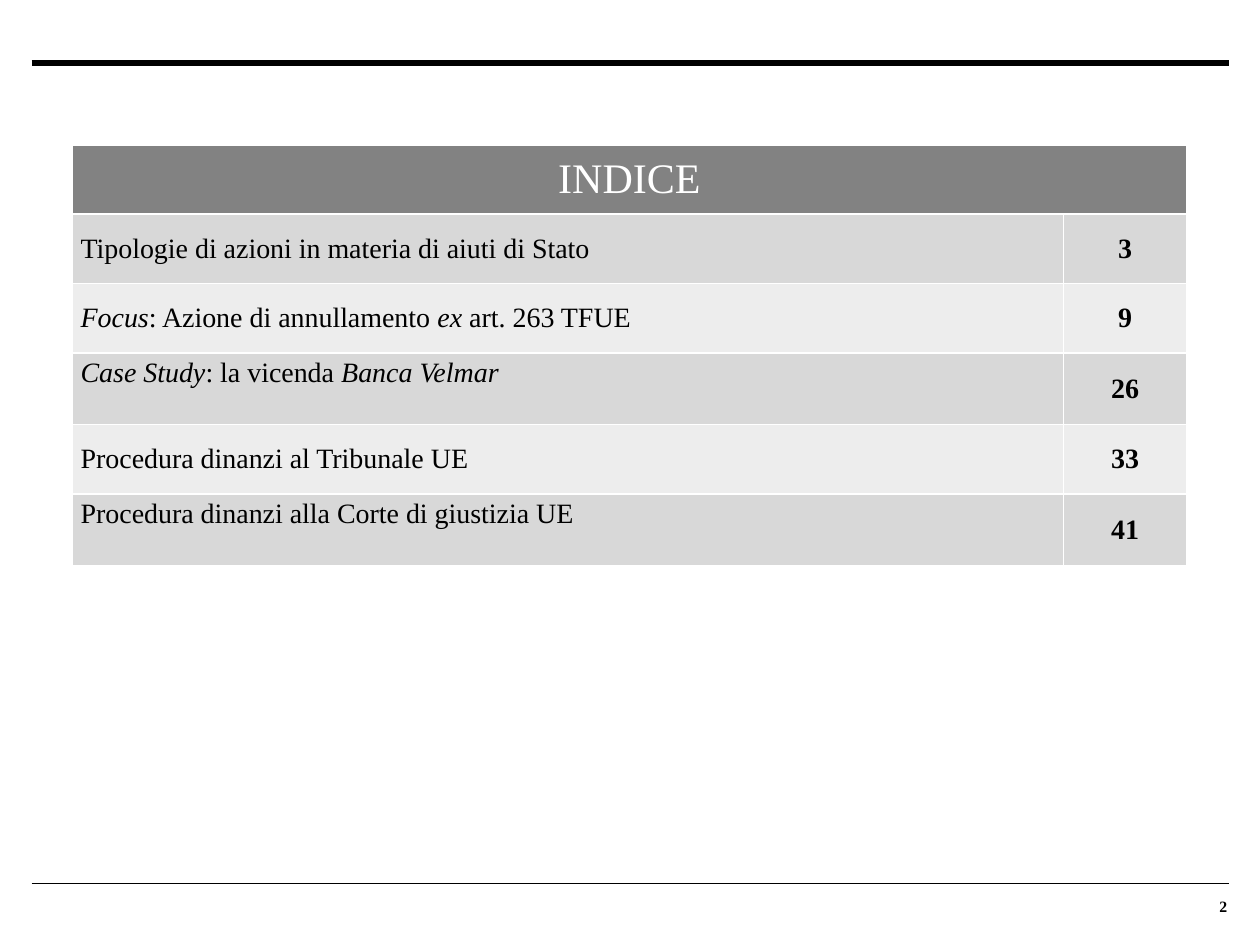
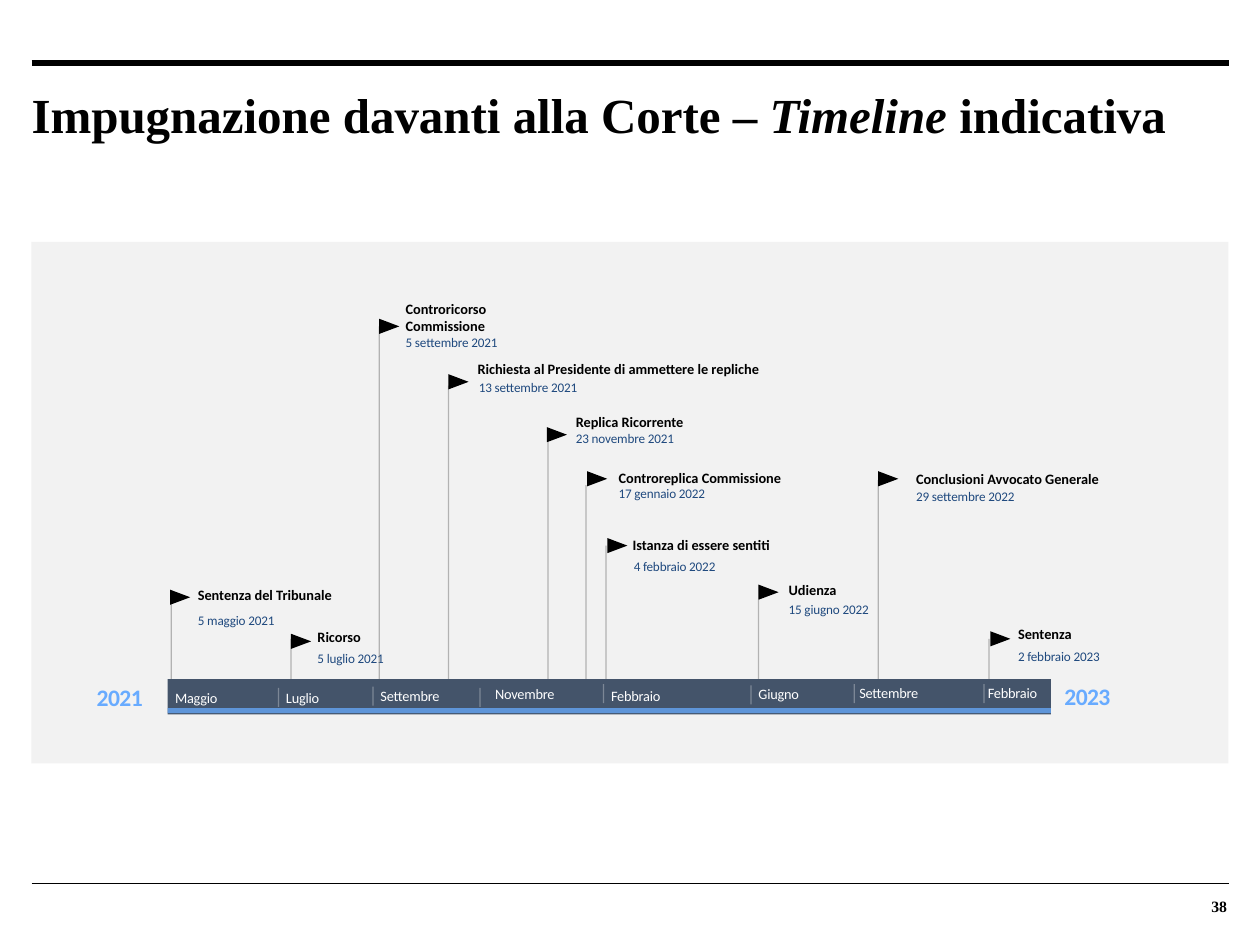
import pptx
import pptx.dml.color
import pptx.enum.shapes
import pptx.enum.text
import pptx.oxml
import pptx.oxml.ns
import pptx.util
from pptx.util import Inches

SERIF = "Times New Roman"
SANS = "Calibri"
BLACK = "000000"
WHITE = "FFFFFF"
PANEL_GREY = "F2F2F2"
HEADER_GREY = "828282"
ROW_GREYS = ("D8D8D8", "EDEDED")
POLE_GREY = "737373"
BAR_NAVY = "44546A"
YEAR_BLUE = "68ABFF"
DATE_BLUE = "1F497E"

LEFT = pptx.enum.text.PP_ALIGN.LEFT
CENTER = pptx.enum.text.PP_ALIGN.CENTER
RIGHT = pptx.enum.text.PP_ALIGN.RIGHT
TOP = pptx.enum.text.MSO_ANCHOR.TOP
MIDDLE = pptx.enum.text.MSO_ANCHOR.MIDDLE
BOTTOM = pptx.enum.text.MSO_ANCHOR.BOTTOM

MARGIN, CONTENT_WIDTH = 0.25, 9.5
BAR_LEFT, BAR_TOP, BAR_WIDTH = 1.33, 5.39, 7.01
TICK_HEIGHT = 0.15

# Runs between asterisks are italic: text, page, anchor of the text
INDEX_ROWS = [
    ("Tipologie di azioni in materia di aiuti di Stato", "3", MIDDLE),
    ("*Focus*: Azione di annullamento *ex* art. 263 TFUE", "9", MIDDLE),
    ("*Case Study*: la vicenda *Banca Velmar*", "26", TOP),
    ("Procedura dinanzi al Tribunale UE", "33", MIDDLE),
    ("Procedura dinanzi alla Corte di giustizia UE", "41", TOP),
]

# Month, label left, label top, tick (x, top)
MONTHS = [
    ("Maggio", 1.39, 5.47, None),
    ("Luglio", 2.27, 5.47, (2.21, 5.46)),
    ("Settembre", 3.02, 5.45, (2.96, 5.45)),
    ("Novembre", 3.93, 5.44, (3.81, 5.46)),
    ("Febbraio", 4.85, 5.45, (4.79, 5.43)),
    ("Giugno", 6.02, 5.44, (5.96, 5.44)),
    ("Settembre", 6.82, 5.43, (6.78, 5.43)),
    ("Febbraio", 7.84, 5.43, (7.81, 5.43)),
]

# Title, date, pole (x, top), flag (left, top), title (left, top, width), date (left, top, width)
EVENTS = [
    ("Sentenza del Tribunale", "5 maggio 2021",
     (1.36, 4.73), (1.37, 4.66), (1.57, 4.65, 1.19), (1.57, 4.86, 0.75)),
    ("Ricorso", "5 luglio 2021",
     (2.31, 5.07), (2.33, 5.01), (2.52, 4.98, 0.87), (2.52, 5.16, 0.67)),
    ("Controricorso\nCommissione", "5 settembre 2021",
     (3.01, 2.59), (3.03, 2.51), (3.22, 2.38, 1.17), (3.22, 2.65, 1.17)),
    ("Richiesta al Presidente di ammettere le repliche", "13 settembre 2021",
     (3.56, 3.06), (3.58, 2.95), (3.79, 2.86, 2.98), (3.8, 3.01, 1.1)),
    ("Replica Ricorrente", "23 novembre 2021",
     (4.35, 3.51), (4.36, 3.37), (4.57, 3.28, 1.21), (4.57, 3.41, 1.01)),
    ("Controreplica Commissione", "17 gennaio 2022",
     (4.65, 3.85), (4.68, 3.72), (4.91, 3.72, 1.62), (4.91, 3.85, 0.81)),
    ("Istanza di essere sentiti", "4 febbraio 2022",
     (4.81, 4.33), (4.84, 4.25), (5.02, 4.25, 1.62), (5.03, 4.43, 0.81)),
    ("Udienza", "15 giugno 2022",
     (6.02, 4.76), (6.04, 4.62), (6.26, 4.61, 1.93), (6.26, 4.77, 1.16)),
    ("Conclusioni Avvocato Generale", "29 settembre 2022",
     (6.97, 3.81), (6.99, 3.72), (7.27, 3.73, 1.55), (7.27, 3.87, 1.12)),
    ("Sentenza", "2 febbraio 2023",
     (7.85, 5.07), (7.88, 4.99), (8.08, 4.96, 0.62), (8.08, 5.14, 0.91)),
]


def rgb(value):
    return pptx.dml.color.RGBColor.from_string(value)


def set_opacity(fill, percent):
    """Make the solid colour under a fill or line element partly transparent."""
    colour = fill.find(".//" + pptx.oxml.ns.qn("a:srgbClr"))
    alpha = pptx.oxml.parse_xml(f'<a:alpha {pptx.oxml.ns.nsdecls("a")} val="{percent * 1000}"/>')
    colour.append(alpha)


def format_run(run, size, colour, font=SERIF, bold=False, italic=False, spacing=0):
    run.font.name = font
    run.font.size = pptx.util.Pt(size)
    run.font.bold = bold
    run.font.italic = italic
    run.font.color.rgb = rgb(colour)
    if spacing:
        run.font._element.set("spc", str(round(spacing * 100)))


def write_marked(paragraph, text, **style):
    """Write text whose parts between asterisks are italic."""
    for index, part in enumerate(text.split("*")):
        if part:
            run = paragraph.add_run()
            run.text = part
            format_run(run, italic=index % 2 == 1, **style)


def clear_insets(text_frame, anchor):
    text_frame.margin_left = text_frame.margin_right = 0
    text_frame.margin_top = text_frame.margin_bottom = 0
    text_frame.vertical_anchor = anchor
    text_frame.word_wrap = True
    text_frame.auto_size = pptx.enum.text.MSO_AUTO_SIZE.NONE


def add_text(slide, text, left, top, width, height, align=LEFT, anchor=MIDDLE, **style):
    box = slide.shapes.add_textbox(Inches(left), Inches(top), Inches(width), Inches(height))
    clear_insets(box.text_frame, anchor)
    box.text_frame.text = text
    for paragraph in box.text_frame.paragraphs:
        paragraph.alignment = align
        for run in paragraph.runs:
            format_run(run, **style)


def add_line(slide, start, end, colour, width, opacity=100):
    line = slide.shapes.add_connector(
        pptx.enum.shapes.MSO_CONNECTOR.STRAIGHT, *map(Inches, start + end))
    line.line.color.rgb = rgb(colour)
    line.line.width = pptx.util.Pt(width)
    properties = line._element.spPr
    if opacity < 100:
        set_opacity(properties, opacity)
    properties.append(pptx.oxml.parse_xml(f'<a:effectLst {pptx.oxml.ns.nsdecls("a")}/>'))


def add_filled_shape(slide, kind, left, top, width, height, colour, opacity=100):
    shape = slide.shapes.add_shape(
        kind, Inches(left), Inches(top), Inches(width), Inches(height))
    shape.shadow.inherit = False
    shape.fill.solid()
    shape.fill.fore_color.rgb = rgb(colour)
    shape.line.fill.background()
    if opacity < 100:
        set_opacity(shape._element.spPr, opacity)
    return shape


def add_rectangle(slide, *placing, **look):
    return add_filled_shape(
        slide, pptx.enum.shapes.MSO_SHAPE.RECTANGLE, *placing, **look)


def add_frame(slide, number):
    """Add the rules and the page number that every slide has."""
    right = MARGIN + CONTENT_WIDTH
    for y, width in ((0.5, 3), (7.01, 0.5)):
        add_line(slide, (MARGIN, y), (right, y), BLACK, width)
    add_text(slide, number, 9.08, 7.04, 0.66, 0.23, align=RIGHT, anchor=BOTTOM,
             size=9, colour=BLACK, bold=True)


def set_title(slide, text):
    title = slide.shapes.title
    title.left, title.top = Inches(MARGIN), Inches(0.67)
    title.width, title.height = Inches(CONTENT_WIDTH), Inches(0.99)
    clear_insets(title.text_frame, TOP)
    paragraph = title.text_frame.paragraphs[0]
    paragraph.alignment = LEFT
    write_marked(paragraph, text, size=28, colour=BLACK, bold=True)


def fill_cell(cell, text, fill, align=LEFT, anchor=MIDDLE, **style):
    cell.fill.solid()
    cell.fill.fore_color.rgb = rgb(fill)
    cell.vertical_anchor = anchor
    cell.margin_left = cell.margin_right = Inches(0.07)
    cell.margin_top = cell.margin_bottom = Inches(0.04)
    paragraph = cell.text_frame.paragraphs[0]
    paragraph.alignment = align
    write_marked(paragraph, text, **style)


def add_index_table(slide):
    table = slide.shapes.add_table(
        len(INDEX_ROWS) + 1, 2, Inches(0.57), Inches(1.15), Inches(8.85), Inches(3.34)).table
    table.columns[0].width = Inches(7.87)
    table.columns[1].width = Inches(0.98)
    table.rows[0].height = Inches(0.55)
    table.cell(0, 0).merge(table.cell(0, 1))
    fill_cell(table.cell(0, 0), "INDICE", HEADER_GREY, CENTER, size=24, colour=WHITE)
    for row, (text, page, anchor) in enumerate(INDEX_ROWS, start=1):
        table.rows[row].height = Inches(0.57 if anchor == TOP else 0.55)
        fill = ROW_GREYS[(row - 1) % 2]
        fill_cell(table.cell(row, 0), text, fill, anchor=anchor, size=16, colour=BLACK)
        fill_cell(table.cell(row, 1), page, fill, CENTER, size=16, colour=BLACK, bold=True)


def add_month(slide, name, left, top, tick):
    if tick:
        x, tick_top = tick
        add_line(slide, tick, (x, tick_top + TICK_HEIGHT), WHITE, 0.75, opacity=30)
    add_text(slide, name, left, top, 0.7, 0.14,
             size=8.2, colour=WHITE, font=SANS, spacing=-0.1)


def add_event(slide, title, date, pole, flag, title_place, date_place):
    add_line(slide, pole, (pole[0], BAR_TOP), POLE_GREY, 0.75, opacity=50)
    pennant = add_filled_shape(
        slide, pptx.enum.shapes.MSO_SHAPE.FLOWCHART_MERGE, *flag, 0.12, 0.16, BLACK)
    pennant.rotation = 270
    title_height = 0.14 * len(title.split("\n"))
    add_text(slide, title, *title_place, title_height,
             size=8.2, colour=BLACK, font=SANS, bold=True)
    add_text(slide, date, *date_place, 0.13,
             size=7.5, colour=DATE_BLUE, font=SANS, spacing=-0.1)


def add_timeline(slide):
    add_rectangle(slide, MARGIN, 1.92, CONTENT_WIDTH, 4.14, colour=PANEL_GREY)
    for event in EVENTS:
        add_event(slide, *event)
    add_rectangle(slide, BAR_LEFT, BAR_TOP, BAR_WIDTH, 0.28, colour=BAR_NAVY)
    add_rectangle(slide, BAR_LEFT, 5.62, BAR_WIDTH, 0.04, colour=YEAR_BLUE, opacity=75)
    for month in MONTHS:
        add_month(slide, *month)
    for year, left, top in (("2021", 0.71, 5.42), ("2023", 8.39, 5.41)):
        add_text(slide, year, left, top, 0.48, 0.23, align=CENTER,
                 size=13.5, colour=YEAR_BLUE, font=SANS, bold=True, spacing=-0.3)


def main():
    presentation = pptx.Presentation()
    presentation.slide_width = Inches(10)
    presentation.slide_height = Inches(7.5)
    title_only, blank = presentation.slide_layouts[5], presentation.slide_layouts[6]

    index_slide = presentation.slides.add_slide(blank)
    add_frame(index_slide, "2")
    add_index_table(index_slide)

    timeline_slide = presentation.slides.add_slide(title_only)
    add_frame(timeline_slide, "38")
    set_title(timeline_slide, "Impugnazione davanti alla Corte – *Timeline* indicativa")
    add_timeline(timeline_slide)

    presentation.save("out.pptx")


if __name__ == "__main__":
    main()
